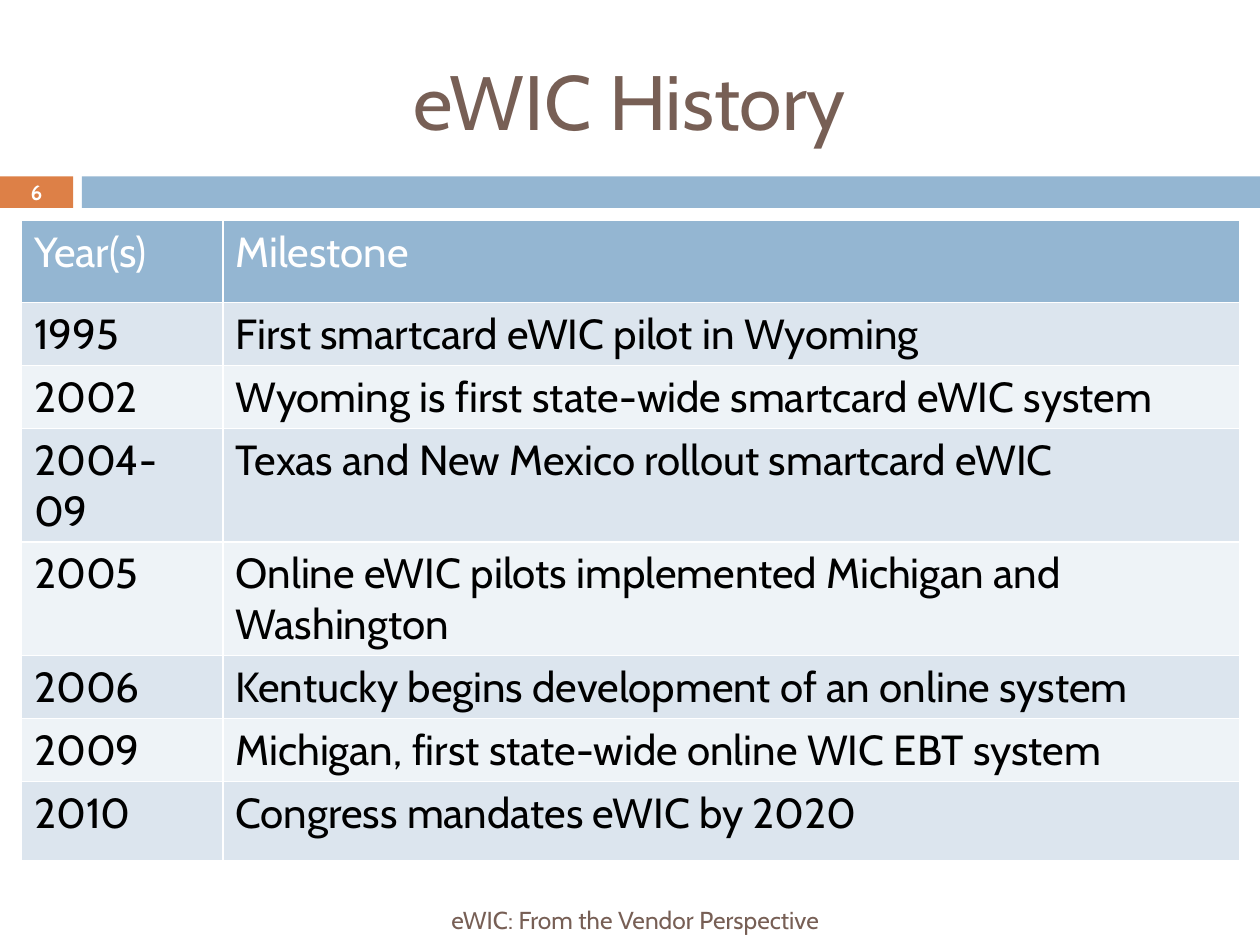
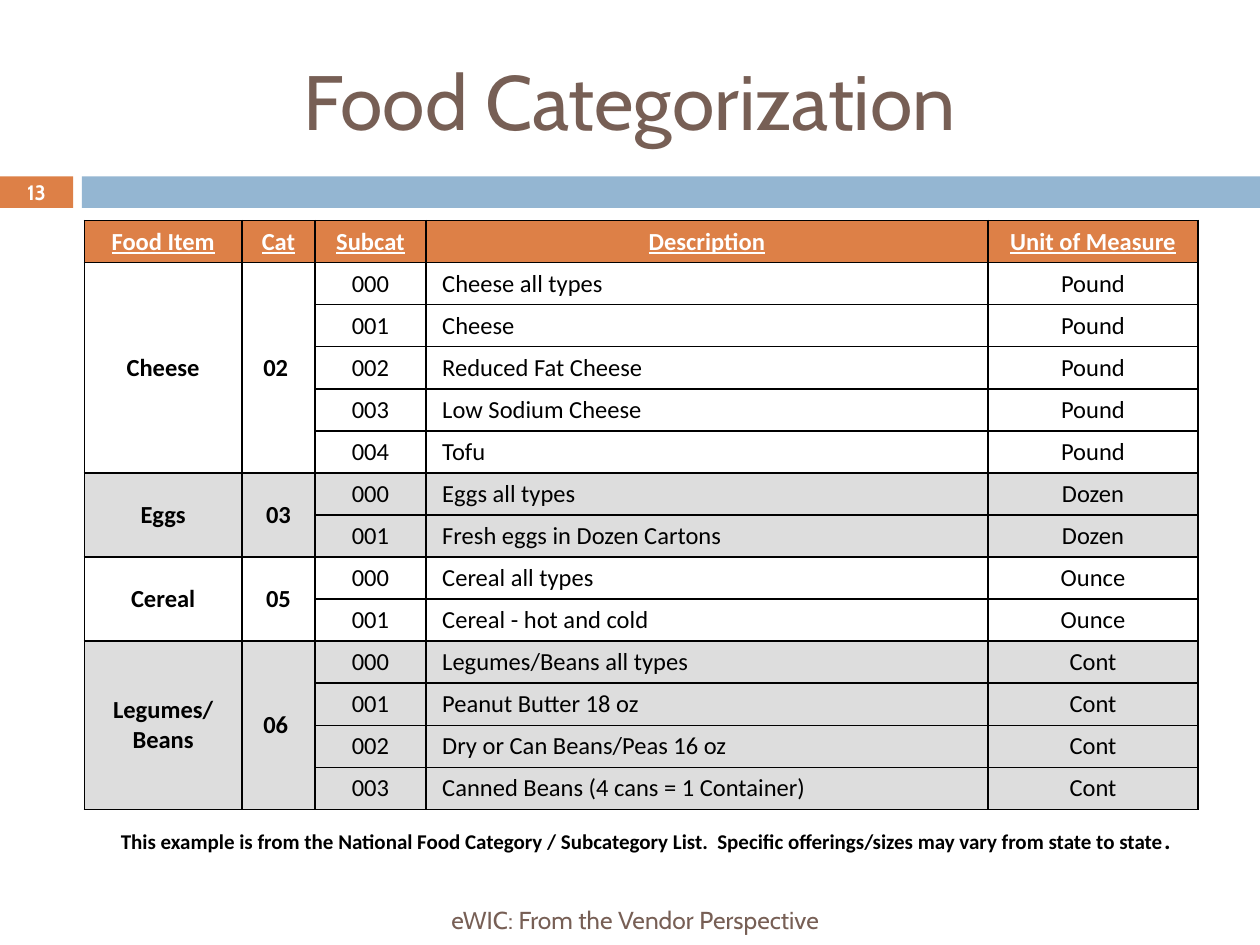
"""Build two eWIC slides: a history table and a food categorization table."""

from dataclasses import dataclass

from lxml.etree import SubElement
from pptx import Presentation
from pptx.dml.color import RGBColor
from pptx.enum.shapes import MSO_SHAPE
from pptx.enum.text import MSO_ANCHOR, PP_ALIGN
from pptx.oxml.ns import qn
from pptx.util import Inches, Pt

FOOTER = "eWIC: From the Vendor Perspective"

HISTORY = [
    ("Year(s)", "Milestone"),
    ("1995", "First smartcard eWIC pilot in Wyoming"),
    ("2002", "Wyoming is first state-wide smartcard eWIC system"),
    ("2004-09", "Texas and New Mexico rollout smartcard eWIC"),
    ("2005", "Online eWIC pilots implemented Michigan and Washington"),
    ("2006", "Kentucky begins development of an online system"),
    ("2009", "Michigan, first state-wide online WIC EBT system"),
    ("2010", "Congress mandates eWIC by 2020"),
]
HISTORY_COLUMNS = [1.6, 8.07]
HISTORY_ROWS = [0.65, 0.5, 0.5, 0.9, 0.9, 0.5, 0.5, 0.63]

FOOD_HEADER = ["Food Item", "Cat", "Subcat", "Description", "Unit of Measure"]
FOOD_GROUPS = [
    ("Cheese", "02 ", "Pound",
     ["Cheese all types", "Cheese", "Reduced Fat Cheese", "Low Sodium Cheese", "Tofu"]),
    ("Eggs", "03", "Dozen", ["Eggs all types", "Fresh eggs in Dozen Cartons"]),
    ("Cereal", "05", "Ounce", ["Cereal all types", "Cereal - hot and cold"]),
    ("Legumes/ Beans", "06 ", "Cont",
     ["Legumes/Beans all types", "Peanut Butter 18 oz", "Dry or Can Beans/Peas 16 oz",
      "Canned Beans (4 cans = 1 Container)"]),
]
FOOD_COLUMNS = [1.25, 0.58, 0.88, 4.46, 1.67]
FOOD_ROW = 0.33
FOOD_NOTE = ("This example is from the National Food Category / Subcategory List.  "
             "Specific offerings/sizes may vary from state to state")


@dataclass(frozen=True)
class Theme:
    heading: str = "Cabin"
    body: str = "Calibri"
    brown: str = "775F55"
    orange: str = "DD8047"
    blue: str = "94B6D2"
    pale_blue: str = "DCE5EE"
    paler_blue: str = "EEF3F7"
    gray: str = "DDDDDD"
    white: str = "FFFFFF"
    black: str = "000000"
    title_size: float = 44
    history_size: float = 24
    small_size: float = 14
    note_size: float = 12
    number_size: float = 11.9
    table_top: float = 1.75


THEME = Theme()


def add_run(paragraph, text, size, color, font=THEME.heading, bold=False, underline=False):
    run = paragraph.add_run()
    run.text = text
    run.font.name = font
    run.font.size = Pt(size)
    run.font.bold = bold
    run.font.underline = underline
    run.font.color.rgb = RGBColor.from_string(color)


def add_text_box(slide, place, align, anchor=MSO_ANCHOR.MIDDLE, margin=0.1):
    frame = slide.shapes.add_textbox(*map(Inches, place)).text_frame
    frame.word_wrap = True
    frame.vertical_anchor = anchor
    frame.margin_left = frame.margin_right = Inches(margin)
    paragraph = frame.paragraphs[0]
    paragraph.alignment = align
    return paragraph


def add_band(slide, left, width, color):
    band = slide.shapes.add_shape(
        MSO_SHAPE.RECTANGLE, Inches(left), Inches(1.4), Inches(width), Inches(0.25))
    band.shadow.inherit = False
    band.fill.solid()
    band.fill.fore_color.rgb = RGBColor.from_string(color)
    band.line.fill.background()


def start_slide(presentation, title, number):
    slide = presentation.slides.add_slide(presentation.slide_layouts[6])
    add_band(slide, 0, 0.58, THEME.orange)
    add_band(slide, 0.65, 9.35, THEME.blue)
    heading = add_text_box(slide, (0, 0.25, 10, 1.08), PP_ALIGN.CENTER)
    add_run(heading, title, THEME.title_size, THEME.brown)
    footer = add_text_box(slide, (0.67, 7.1, 5.93, 0.4), PP_ALIGN.RIGHT)
    add_run(footer, FOOTER, THEME.small_size, THEME.brown)
    counter = add_text_box(slide, (0, 1.39, 0.58, 0.27), PP_ALIGN.CENTER, margin=0)
    add_run(counter, number, THEME.number_size, THEME.white, bold=True)
    return slide


def add_border(cell, color):
    properties = cell._tc.get_or_add_tcPr()
    for side in ("a:lnL", "a:lnR", "a:lnT", "a:lnB"):
        line = SubElement(properties, qn(side), w=str(Pt(1)))
        fill = SubElement(line, qn("a:solidFill"))
        SubElement(fill, qn("a:srgbClr"), val=color)


def add_grid(slide, left, columns, rows, border):
    frame = slide.shapes.add_table(
        len(rows), len(columns), Inches(left), Inches(THEME.table_top),
        Inches(sum(columns)), Inches(sum(rows)))
    table = frame.table
    table.first_row = table.horz_banding = False
    for column, width in zip(table.columns, columns):
        column.width = Inches(width)
    for row, height in zip(table.rows, rows):
        row.height = Inches(height)
    for cell in table.iter_cells():
        add_border(cell, border)
    return table


def fill_cell(cell, color):
    cell.fill.solid()
    cell.fill.fore_color.rgb = RGBColor.from_string(color)


def write_food(cell, text, color=THEME.black, bold=False, underline=False,
               anchor=MSO_ANCHOR.MIDDLE, align=PP_ALIGN.CENTER):
    cell.margin_left = cell.margin_right = Inches(0.13)
    cell.vertical_anchor = anchor
    paragraph = cell.text_frame.paragraphs[0]
    paragraph.alignment = align
    add_run(paragraph, text, THEME.small_size, color, THEME.body, bold, underline)


def build_history(presentation):
    slide = start_slide(presentation, "eWIC History", "6")
    table = add_grid(slide, 0.17, HISTORY_COLUMNS, HISTORY_ROWS, THEME.white)
    for row, texts in enumerate(HISTORY):
        band = THEME.pale_blue if row % 2 else THEME.paler_blue
        for column, text in enumerate(texts):
            cell = table.cell(row, column)
            fill_cell(cell, band if row else THEME.blue)
            add_run(cell.text_frame.paragraphs[0], text, THEME.history_size,
                    THEME.black if row else THEME.white)


def build_food(presentation):
    slide = start_slide(presentation, "Food Categorization", "13")
    row_count = 1 + sum(len(descriptions) for *_, descriptions in FOOD_GROUPS)
    table = add_grid(slide, 0.67, FOOD_COLUMNS, [FOOD_ROW] * row_count, THEME.black)
    for column, text in enumerate(FOOD_HEADER):
        cell = table.cell(0, column)
        fill_cell(cell, THEME.orange)
        write_food(cell, text, THEME.white, bold=True, underline=True)
    first = 1
    for index, (item, category, unit, descriptions) in enumerate(FOOD_GROUPS):
        last = first + len(descriptions) - 1
        for row in range(first, last + 1):
            for column in range(len(FOOD_COLUMNS)):
                fill_cell(table.cell(row, column), THEME.gray if index % 2 else THEME.white)
        for column, text in enumerate((item, category)):
            cell = table.cell(first, column)
            cell.merge(table.cell(last, column))
            write_food(cell, text, bold=True)
        for offset, description in enumerate(descriptions):
            for column, text in enumerate((f"{offset:03}", description, unit), start=2):
                align = PP_ALIGN.LEFT if text == description else PP_ALIGN.CENTER
                write_food(table.cell(first + offset, column), text,
                           anchor=MSO_ANCHOR.BOTTOM, align=align)
        first = last + 1
    note = add_text_box(slide, (0.5, 6.5, 9.25, 0.34), PP_ALIGN.CENTER, MSO_ANCHOR.TOP)
    add_run(note, FOOD_NOTE, THEME.note_size, THEME.black, THEME.body, bold=True)
    add_run(note, ".", THEME.small_size, THEME.black, THEME.body, bold=True)


def main():
    presentation = Presentation()
    presentation.slide_width = Inches(10)
    presentation.slide_height = Inches(7.5)
    build_history(presentation)
    build_food(presentation)
    presentation.save("out.pptx")


if __name__ == "__main__":
    main()
